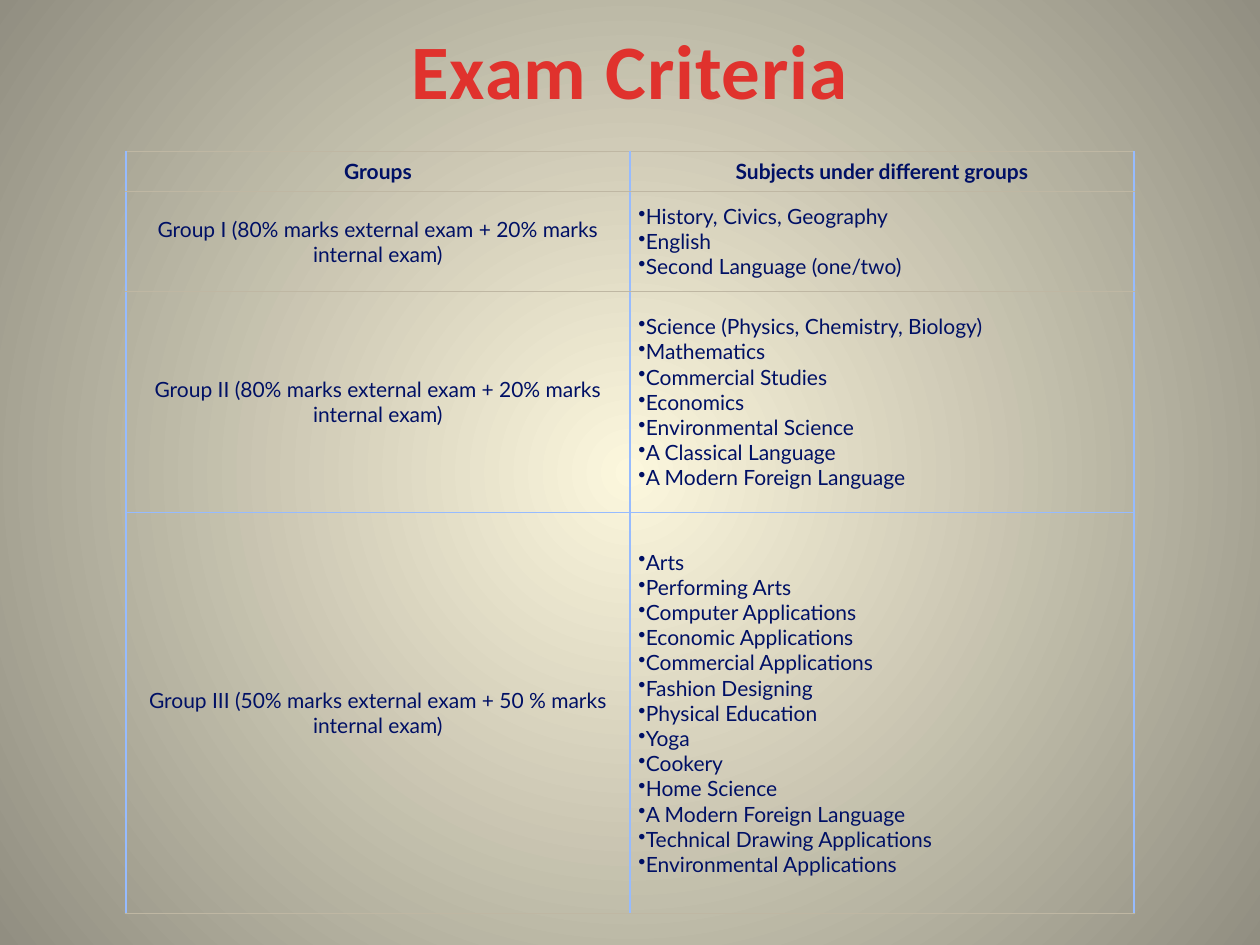
import pptx
import pptx.dml.color
import pptx.enum.text
import pptx.oxml
import pptx.oxml.ns
import pptx.util
from pptx.util import Cm

NS = pptx.oxml.ns.nsdecls("a")
ALIGN = pptx.enum.text.PP_ALIGN
MIDDLE = pptx.enum.text.MSO_ANCHOR.MIDDLE


def color(value):
    return pptx.dml.color.RGBColor.from_string(value)


def write(frame, lines, font="Lato", size=12, fill="001065", bold=False,
          align=ALIGN.CENTER, bullet=None, spacing=None):
    """Write one paragraph per line; spacing is in hundredths of a point."""
    frame.word_wrap = True
    for i, line in enumerate(lines):
        paragraph = frame.paragraphs[0] if i == 0 else frame.add_paragraph()
        paragraph.alignment = align
        if bullet:
            paragraph._p.get_or_add_pPr().append(
                pptx.oxml.parse_xml(f'<a:buChar {NS} char="{bullet}"/>'))
        run = paragraph.add_run()
        run.text = line
        run.font.name = font
        run.font.size = pptx.util.Pt(size)
        run.font.bold = bold
        run.font.color.rgb = color(fill)
        if spacing:
            run.font._element.set("spc", str(spacing))


prs = pptx.Presentation()
prs.slide_width, prs.slide_height = Cm(25.4), Cm(19.05)
slide = prs.slides.add_slide(prs.slide_layouts[6])

# Background glowing from the centre
background = slide.background.fill
background.gradient()
for stop, shade in zip(background.gradient_stops, ("FCF7DD", "918E81")):
    stop.color.rgb = color(shade)
gradient = slide.element.find(".//" + pptx.oxml.ns.qn("a:gradFill"))
linear = gradient.find(pptx.oxml.ns.qn("a:lin"))
gradient.replace(linear, pptx.oxml.parse_xml(
    f'<a:path {NS} path="circle">'
    '<a:fillToRect l="50000" t="50000" r="50000" b="50000"/></a:path>'))

title = slide.shapes.add_textbox(Cm(1.27), Cm(-0.2), Cm(22.86), Cm(3.18)).text_frame
title.vertical_anchor = MIDDLE
write(title, ["Exam Criteria"], font="Calibri", size=44, fill="E0322D",
      bold=True, spacing=50)

# Exam groups: row height in cm, group, subjects
groups = [
    (0.81, "Groups", ["Subjects under different groups"]),
    (2.02, "Group I (80% marks external exam + 20% marks internal exam)",
     ["History, Civics, Geography", "English", "Second Language (one/two)"]),
    (4.45, "Group II (80% marks external exam + 20% marks internal exam)",
     ["Science (Physics, Chemistry, Biology)", "Mathematics",
      "Commercial Studies", "Economics", "Environmental Science",
      "A Classical Language", "A Modern Foreign Language"]),
    (8.09, "Group III (50% marks external exam + 50 % marks internal exam)",
     ["Arts", "Performing Arts", "Computer Applications",
      "Economic Applications", "Commercial Applications", "Fashion Designing",
      "Physical Education", "Yoga", "Cookery", "Home Science",
      "A Modern Foreign Language", "Technical Drawing Applications",
      "Environmental Applications"]),
]
criteria = slide.shapes.add_table(len(groups), 2, Cm(2.54), Cm(3.05),
                                  Cm(20.32), Cm(15.37)).table
criteria.first_row = criteria.horz_banding = False

BLUE, FAINT = ("96BBFF", 9525), ("BFB7A3", 6350)
rules = [FAINT, FAINT, FAINT, BLUE, FAINT]  # horizontal, top to bottom

for r, (height, group, subjects) in enumerate(groups):
    criteria.rows[r].height = Cm(height)
    for c, lines in enumerate(([group], subjects)):
        cell = criteria.cell(r, c)
        cell.vertical_anchor = MIDDLE
        cell.margin_left = cell.margin_right = Cm(0.17)
        cell.margin_top = cell.margin_bottom = Cm(0.08)
        cell.fill.background()
        listed = r > 0 and c == 1
        write(cell.text_frame, lines, bold=r == 0,
              align=ALIGN.LEFT if listed else ALIGN.CENTER,
              bullet="•" if listed else None)
        borders = {"L": BLUE, "R": BLUE, "T": rules[r], "B": rules[r + 1]}
        for i, (side, (shade, width)) in enumerate(borders.items()):
            cell._tc.get_or_add_tcPr().insert(i, pptx.oxml.parse_xml(
                f'<a:ln{side} {NS} w="{width}"><a:solidFill>'
                f'<a:srgbClr val="{shade}"/></a:solidFill></a:ln{side}>'))

prs.save("out.pptx")
